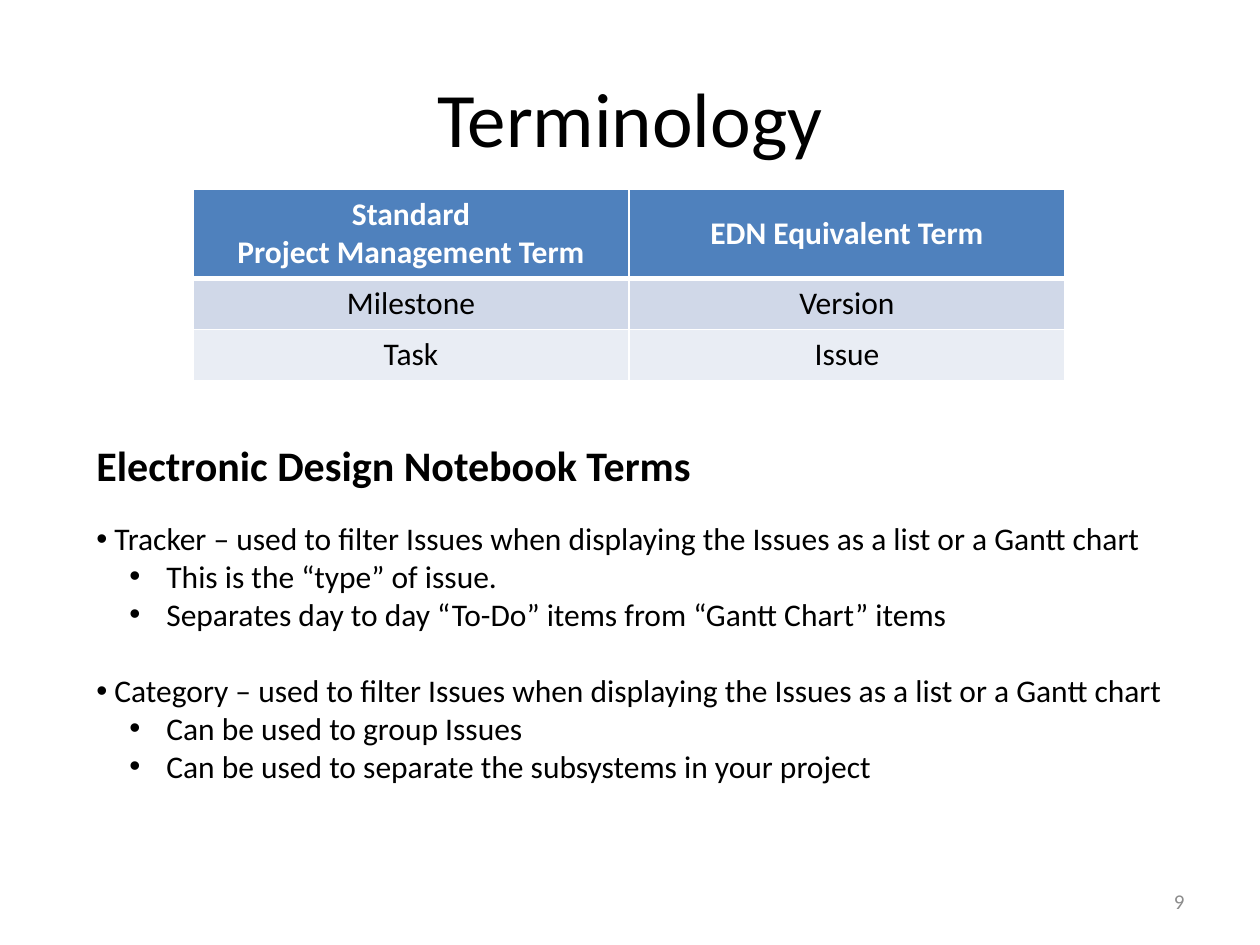
from dataclasses import dataclass

import lxml.etree
import pptx
import pptx.dml.color
import pptx.enum.text
import pptx.oxml.ns
import pptx.util

PX_PER_INCH = 126
ALIGN = pptx.enum.text.PP_ALIGN
ANCHOR = pptx.enum.text.MSO_ANCHOR
qn = pptx.oxml.ns.qn


@dataclass(frozen=True)
class Theme:
    font: str = "Calibri"
    text: str = "000000"
    white: str = "FFFFFF"
    header: str = "4F81BD"
    bands: tuple[str, str] = ("D0D8E8", "E9EDF4")
    number: str = "8C8C8C"
    title_pt: int = 44
    heading_pt: int = 24
    body_pt: int = 18
    number_pt: int = 12


@dataclass(frozen=True)
class Box:
    left: int
    top: int
    width: int
    height: int


@dataclass(frozen=True)
class Bullet:
    """Left edge of the text and offset of its bullet mark, in px."""
    margin: int
    indent: int


@dataclass(frozen=True)
class Term:
    definition: str
    details: tuple[str, ...]
    gap_pt: int


THEME = Theme()
TERM_BULLET = Bullet(18, -18)
DETAIL_BULLET = Bullet(70, -37)

TABLE_BOX = Box(193, 189, 872, 190)
ROW_HEIGHTS = (88, 51, 51)
TABLE_ROWS = (
    (("Standard", "Project Management Term"), ("EDN Equivalent Term",)),
    (("Milestone",), ("Version",)),
    (("Task",), ("Issue",)),
)
TERMS = (
    Term("Tracker – used to filter Issues when displaying the Issues as a list or a Gantt chart",
         ("This is the “type” of issue.",
          "Separates day to day “To-Do” items from “Gantt Chart” items"), 17),
    Term("Category – used to filter Issues when displaying the Issues as a list or a Gantt chart",
         ("Can be used to group Issues",
          "Can be used to separate the subsystems in your project"), 22),
)


def px(n: int) -> int:
    return round(n * 914400 / PX_PER_INCH)


def place(box: Box) -> tuple[int, int, int, int]:
    return px(box.left), px(box.top), px(box.width), px(box.height)


def add_run(p, text: str, size: int, color: str = THEME.text, bold: bool = False) -> None:
    r = p.add_run()
    r.text = text
    r.font.name = THEME.font
    r.font.size = pptx.util.Pt(size)
    r.font.bold = bold
    r.font.color.rgb = pptx.dml.color.RGBColor.from_string(color)


def set_bullet(p, bullet: Bullet) -> None:
    ppr = p._p.get_or_add_pPr()
    ppr.set("marL", str(px(bullet.margin)))
    ppr.set("indent", str(px(bullet.indent)))
    lxml.etree.SubElement(ppr, qn("a:buFont"), typeface="Arial")
    lxml.etree.SubElement(ppr, qn("a:buChar"), char="•")


def set_borders(cell, bottom_pt: int, top_pt: int) -> None:
    tcpr = cell._tc.get_or_add_tcPr()
    for side, width in (("L", 1), ("R", 1), ("T", top_pt), ("B", bottom_pt)):
        ln = lxml.etree.SubElement(tcpr, qn(f"a:ln{side}"), w=str(pptx.util.Pt(width)))
        fill = lxml.etree.SubElement(ln, qn("a:solidFill"))
        lxml.etree.SubElement(fill, qn("a:srgbClr"), val=THEME.white)


def add_title(s, text: str, box: Box) -> None:
    sp = s.shapes.title
    sp.left, sp.top, sp.width, sp.height = place(box)
    sp.text_frame.vertical_anchor = ANCHOR.MIDDLE
    p = sp.text_frame.paragraphs[0]
    p.alignment = ALIGN.CENTER
    add_run(p, text, THEME.title_pt)


def fill_cell(cell, lines: tuple[str, ...], row: int) -> None:
    is_header = row == 0
    set_borders(cell, bottom_pt=3 if is_header else 1, top_pt=3 if row == 1 else 1)
    cell.fill.solid()
    color = THEME.header if is_header else THEME.bands[(row - 1) % 2]
    cell.fill.fore_color.rgb = pptx.dml.color.RGBColor.from_string(color)
    cell.vertical_anchor = ANCHOR.MIDDLE if is_header else ANCHOR.TOP
    tf = cell.text_frame
    for i, line in enumerate(lines):
        p = tf.add_paragraph() if i else tf.paragraphs[0]
        p.alignment = ALIGN.CENTER
        add_run(p, line, THEME.body_pt, THEME.white if is_header else THEME.text, is_header)


def add_term_table(s) -> None:
    columns = len(TABLE_ROWS[0])
    table = s.shapes.add_table(len(TABLE_ROWS), columns, *place(TABLE_BOX)).table
    for column in table.columns:
        column.width = px(TABLE_BOX.width // columns)
    for i, (height, row) in enumerate(zip(ROW_HEIGHTS, TABLE_ROWS)):
        table.rows[i].height = px(height)
        for j, lines in enumerate(row):
            fill_cell(table.cell(i, j), lines, i)


def add_definitions(s, heading: str, box: Box) -> None:
    tf = s.shapes.add_textbox(*place(box)).text_frame
    tf.word_wrap = False
    add_run(tf.paragraphs[0], heading, THEME.heading_pt, bold=True)
    for term in TERMS:
        p = tf.add_paragraph()
        set_bullet(p, TERM_BULLET)
        p.space_before = pptx.util.Pt(term.gap_pt)
        add_run(p, term.definition, THEME.body_pt)
        for detail in term.details:
            p = tf.add_paragraph()
            p.level = 1
            set_bullet(p, DETAIL_BULLET)
            add_run(p, detail, THEME.body_pt)


def add_slide_number(s, number: str, box: Box) -> None:
    tf = s.shapes.add_textbox(*place(box)).text_frame
    tf.word_wrap = True
    tf.vertical_anchor = ANCHOR.MIDDLE
    p = tf.paragraphs[0]
    p.alignment = ALIGN.RIGHT
    add_run(p, number, THEME.number_pt, THEME.number)


def main() -> None:
    prs = pptx.Presentation()
    prs.slide_width, prs.slide_height = px(1260), px(945)
    s = prs.slides.add_slide(prs.slide_layouts[5])
    add_title(s, "Terminology", Box(63, 38, 1134, 157))
    add_term_table(s)
    add_definitions(s, "Electronic Design Notebook Terms", Box(84, 433, 1105, 360))
    add_slide_number(s, "9", Box(903, 876, 294, 50))
    prs.save("out.pptx")


if __name__ == "__main__":
    main()
